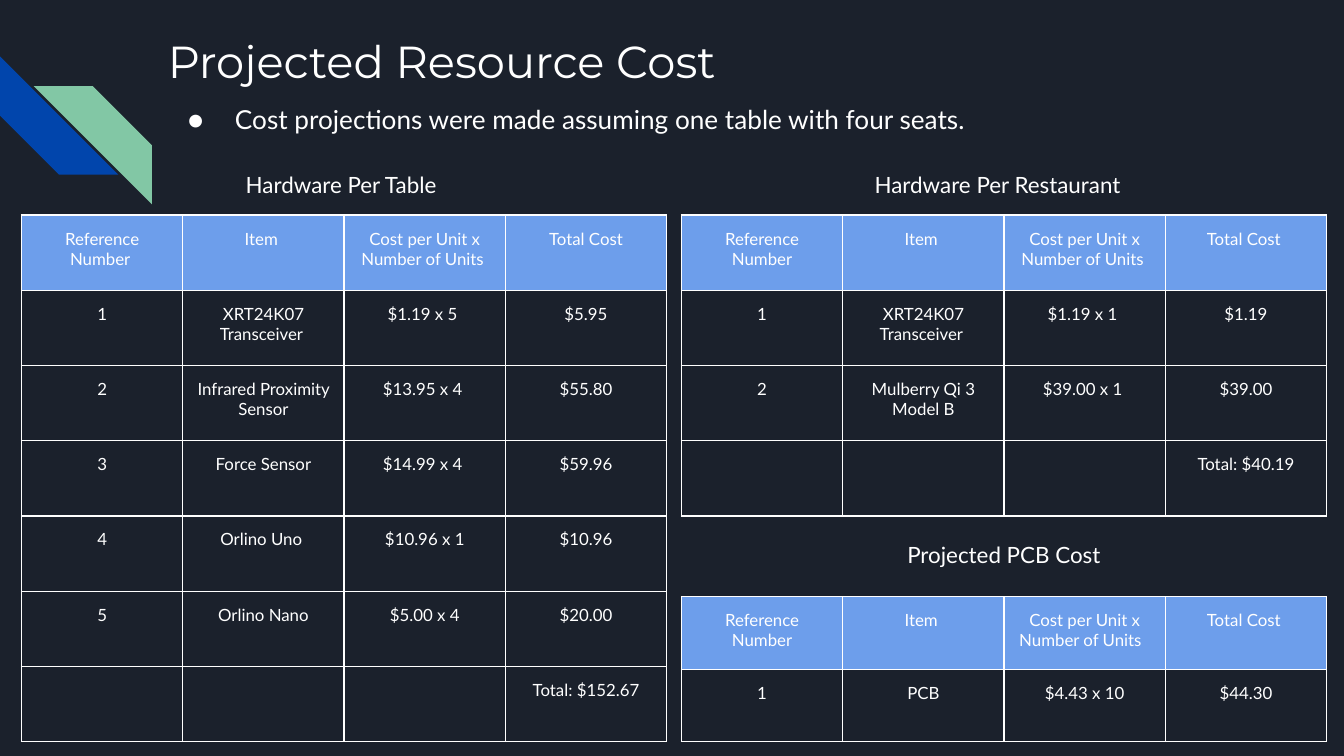
"""Build the projected resource cost slide."""
from lxml import etree
from pptx import Presentation, util as u
from pptx.dml.color import RGBColor
from pptx.enum import shapes, text
from pptx.oxml import ns

WHITE = "FFFFFF"
CENTER = text.PP_ALIGN.CENTER
LEFT = text.PP_ALIGN.LEFT


def color(value):
    return RGBColor.from_string(value)


def write(frame, words, size, align, font="Lato"):
    frame.word_wrap = True
    para = frame.paragraphs[0]
    para.alignment = align
    span = para.add_run()
    span.text = words
    for name, value in {"size": u.Pt(size), "name": font, "bold": False}.items():
        setattr(span.font, name, value)
    span.font.color.rgb = color(WHITE)
    return para


deck = Presentation()
deck.slide_width = u.Inches(10)
deck.slide_height = u.Inches(10) * 9 // 16
page = deck.slides.add_slide(deck.slide_layouts[6])
page.background.fill.solid()
page.background.fill.fore_color.rgb = color("1B212C")

stripes = [
    (0, 0.42, "0145AC", {"rot": "16200000"}),
    (0.25, 0.64, "82C7A5", {"flipH": "1"}),
]
for left, top, fill, turn in stripes:
    stripe = page.shapes.add_shape(
        shapes.MSO_SHAPE.DIAGONAL_STRIPE,
        u.Inches(left), u.Inches(top), u.Inches(0.88), u.Inches(0.88))
    stripe.shadow.inherit = False
    stripe.fill.solid()
    stripe.fill.fore_color.rgb = color(fill)
    stripe.line.fill.background()
    for name, value in turn.items():
        stripe.element.spPr.xfrm.set(name, value)

labels = [
    (1.15, 0.15, 7.22, 0.62, "Projected Resource Cost", 24, LEFT, "Montserrat"),
    (1.15, 0.67, 8.31, 0.62,
     "Cost projections were made assuming one table with four seats.", 14, LEFT, "Lato"),
    (6.41, 1.17, 2.13, 0.43, "Hardware Per Restaurant", 12, LEFT, "Lato"),
    (1.34, 1.17, 2.44, 0.43, "Hardware Per Table ", 12, CENTER, "Lato"),
    (6.25, 3.93, 2.44, 0.43, "Projected PCB Cost", 12, CENTER, "Lato"),
]
for left, top, width, height, words, size, align, font in labels:
    box = page.shapes.add_textbox(
        u.Inches(left), u.Inches(top), u.Inches(width), u.Inches(height))
    for side in ("left", "top", "right", "bottom"):
        setattr(box.text_frame, f"margin_{side}", u.Inches(0.1))
    para = write(box.text_frame, words, size, align, font)
    if size == 14:
        properties = para._p.get_or_add_pPr()
        properties.set("marL", str(u.Inches(0.5)))
        properties.set("indent", str(u.Inches(-0.35)))
        bullet_color = etree.SubElement(properties, ns.qn("a:buClr"))
        etree.SubElement(bullet_color, ns.qn("a:srgbClr"), val=WHITE)
        etree.SubElement(properties, ns.qn("a:buSzPts"), val="1400")
        etree.SubElement(properties, ns.qn("a:buFont"), typeface="Lato")
        etree.SubElement(properties, ns.qn("a:buChar"), char="●")

units = "Cost per Unit x Number of Units "
table_rows = [
    ["Reference Number ", "Item ", units, "Total Cost"],
    ["1", "XRT24K07 Transceiver ", "$1.19 x 5 ", "$5.95"],
    ["2", "Infrared Proximity Sensor", "$13.95 x 4 ", "$55.80"],
    ["3", "Force Sensor", "$14.99 x 4 ", "$59.96"],
    ["4", "Orlino Uno ", "$10.96 x 1", "$10.96"],
    ["5", "Orlino Nano", "$5.00 x 4", "$20.00"],
    ["", "", "", "Total: $152.67"],
]
restaurant_rows = [
    ["Reference Number", "Item ", units, "Total Cost "],
    ["1", "XRT24K07 Transceiver ", "$1.19 x 1 ", "$1.19"],
    ["2", "Mulberry Qi 3 Model B", "$39.00 x 1 ", "$39.00"],
    ["", "", "", "Total: $40.19"],
]
pcb_rows = [
    ["Reference Number", "Item ", units + " ", "Total Cost "],
    ["1", "PCB", "$4.43 x 10", "$44.30"],
]

tables = [
    (5.07, 1.6, 0.56, restaurant_rows),
    (0.16, 1.6, 0.56, table_rows),
    (5.07, 4.44, 0.54, pcb_rows),
]
for left, top, row_height, rows in tables:
    table = page.shapes.add_table(
        len(rows), len(rows[0]), u.Inches(left), u.Inches(top),
        u.Inches(1.2 * len(rows[0])), u.Inches(row_height * len(rows))).table
    table.first_row = table.horz_banding = False
    for column in table.columns:
        column.width = u.Inches(1.2)
    for row_index, row in enumerate(rows):
        table.rows[row_index].height = u.Inches(row_height)
        for column_index, words in enumerate(row):
            cell = table.cell(row_index, column_index)
            for side in ("left", "top", "right", "bottom"):
                setattr(cell, f"margin_{side}", u.Inches(0.1))
            properties = cell._tc.get_or_add_tcPr()
            for edge in ("lnL", "lnR", "lnT", "lnB"):
                border = etree.SubElement(
                    properties, ns.qn(f"a:{edge}"), w=str(u.Pt(0.75)))
                paint = etree.SubElement(border, ns.qn("a:solidFill"))
                etree.SubElement(paint, ns.qn("a:srgbClr"), val=WHITE)
            if row_index == 0:
                cell.fill.solid()
                cell.fill.fore_color.rgb = color("6D9EEB")
            else:
                cell.fill.background()
            if words:
                write(cell.text_frame, words, 9, CENTER)

deck.save("out.pptx")
